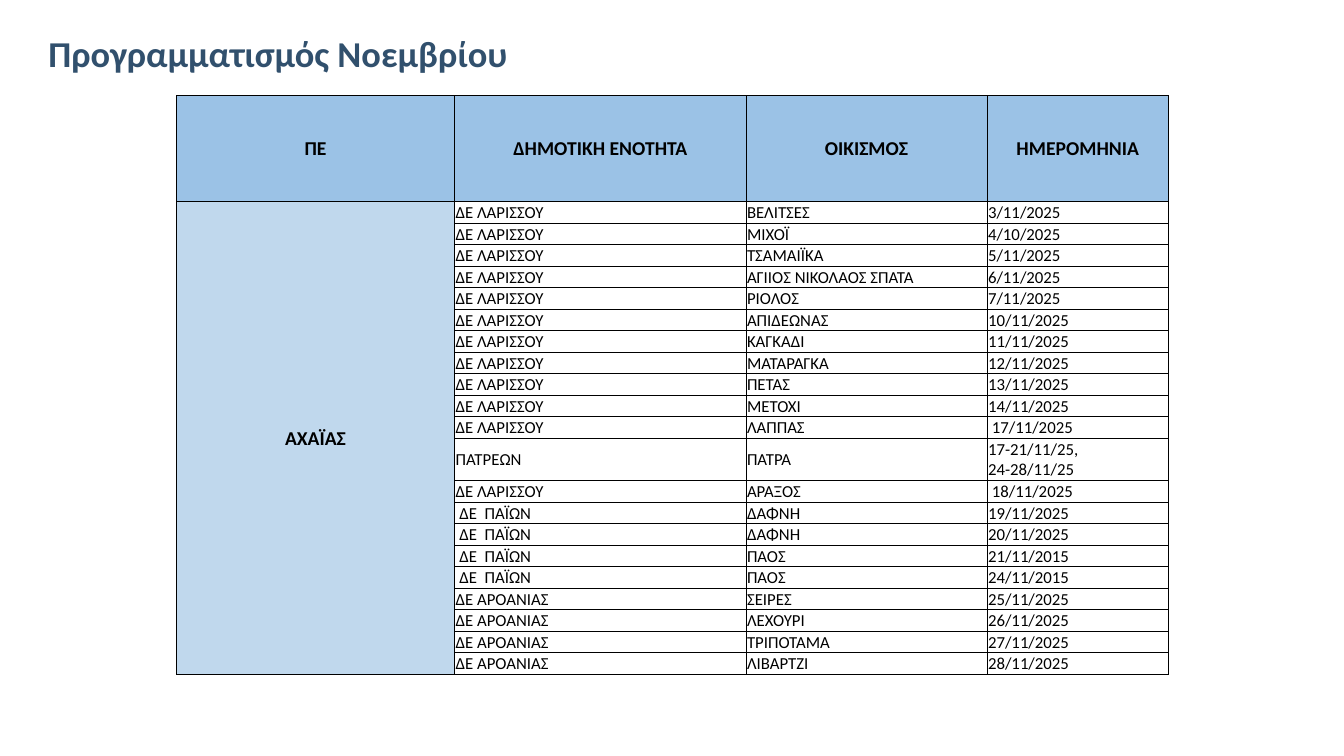
"""Build the November schedule slide: a title above a table of visits."""
import pptx
import pptx.util
import pptx.dml.color
import pptx.enum.text
import pptx.oxml.ns
import lxml.etree

Inch = pptx.util.Inches
qn = pptx.oxml.ns.qn
Align = pptx.enum.text.PP_ALIGN
Anchor = pptx.enum.text.MSO_ANCHOR


def paint(color, shade):
    color.rgb = pptx.dml.color.RGBColor.from_string(shade)


def style(par, size, shade, bold, align):
    par.alignment = align
    for run in par.runs:
        run.font.name = "Calibri"
        run.font.size = pptx.util.Pt(size)
        run.font.bold = bold
        paint(run.font.color, shade)
    for gap in par._p.iter(qn("a:br")):
        lxml.etree.SubElement(gap, qn("a:rPr"), sz=str(size * 100))


heads = ["ΠΕ", "ΔΗΜΟΤΙΚΗ ΕΝΟΤΗΤΑ", "ΟΙΚΙΣΜΟΣ", "ΗΜΕΡΟΜΗΝΙΑ"]
region = "ΑΧΑΪΑΣ"
lariss, paion, aroan = "ΔΕ ΛΑΡΙΣΣΟΥ", " ΔΕ  ΠΑΪΩΝ", "ΔΕ ΑΡΟΑΝΙΑΣ"
visits = [
    (lariss, "ΒΕΛΙΤΣΕΣ", "3/11/2025"),
    (lariss, "ΜΙΧΟΪ", "4/10/2025"),
    (lariss, "ΤΣΑΜΑΙΪΚΑ", "5/11/2025"),
    (lariss, "ΑΓΙΙΟΣ ΝΙΚΟΛΑΟΣ ΣΠΑΤΑ", "6/11/2025"),
    (lariss, "ΡΙΟΛΟΣ", "7/11/2025"),
    (lariss, "ΑΠΙΔΕΩΝΑΣ", "10/11/2025"),
    (lariss, "ΚΑΓΚΑΔΙ", "11/11/2025"),
    (lariss, "ΜΑΤΑΡΑΓΚΑ", "12/11/2025"),
    (lariss, "ΠΕΤΑΣ", "13/11/2025"),
    (lariss, "ΜΕΤΟΧΙ", "14/11/2025"),
    (lariss, "ΛΑΠΠΑΣ", " 17/11/2025"),
    ("ΠΑΤΡΕΩΝ", "ΠΑΤΡΑ", "17-21/11/25,\n24-28/11/25"),
    (lariss, "ΑΡΑΞΟΣ", " 18/11/2025"),
    (paion, "ΔΑΦΝΗ", "19/11/2025"),
    (paion, "ΔΑΦΝΗ", "20/11/2025"),
    (paion, "ΠΑΟΣ", "21/11/2015"),
    (paion, "ΠΑΟΣ", "24/11/2015"),
    (aroan, "ΣΕΙΡΕΣ", "25/11/2025"),
    (aroan, "ΛΕΧΟΥΡΙ", "26/11/2025"),
    (aroan, "ΤΡΙΠΟΤΑΜΑ", "27/11/2025"),
    (aroan, "ΛΙΒΑΡΤΖΙ", "28/11/2025"),
]
widths = [2.76, 2.89, 2.39, 1.8]
line = 0.21
tall = 5 * line
heights = [tall] + [line * (1 + day.count("\n")) for _, _, day in visits]

deck = pptx.Presentation()
deck.slide_width, deck.slide_height = Inch(13.33), Inch(7.5)
slide = deck.slides.add_slide(deck.slide_layouts[5])

title = slide.shapes.title
title.left, title.top = Inch(0.36), Inch(0.25)
title.width, title.height = Inch(12.4), Inch(0.55)
frame = title.text_frame
frame.text = "Προγραμματισμός Νοεμβρίου"
frame.auto_size = pptx.enum.text.MSO_AUTO_SIZE.NONE
frame.vertical_anchor = Anchor.BOTTOM
frame.margin_left = Inch(0.12)
frame.paragraphs[0].line_spacing = 0.9
style(frame.paragraphs[0], 26, "31506D", True, Align.LEFT)

table = slide.shapes.add_table(
    len(heights), len(widths), Inch(1.75), Inch(0.95),
    Inch(sum(widths)), Inch(sum(heights))).table
table.first_row = table.horz_banding = False
for col, width in zip(table.columns, widths):
    col.width = Inch(width)
for row, height in zip(table.rows, heights):
    row.height = Inch(height)
table.cell(1, 0).merge(table.cell(len(visits), 0))

grid = [heads] + [(region if n == 0 else "", *visit) for n, visit in enumerate(visits)]
for r, words in enumerate(grid):
    for c, word in enumerate(words):
        cell = table.cell(r, c)
        cell.margin_left = cell.margin_right = cell.margin_top = Inch(0.01)
        cell.margin_bottom = 0
        cell.vertical_anchor = Anchor.MIDDLE
        for side in "LRTB":
            edge = lxml.etree.SubElement(cell._tc.tcPr, qn("a:ln" + side), w="6350")
            fill = lxml.etree.SubElement(edge, qn("a:solidFill"))
            lxml.etree.SubElement(fill, qn("a:srgbClr"), val="000000")
        cell.fill.solid()
        paint(cell.fill.fore_color, "9BC2E6" if r == 0 else "C0D8ED" if c == 0 else "FFFFFF")
        if word:
            par = cell.text_frame.paragraphs[0]
            par.text = word
            main = r == 0 or c == 0
            style(par, 14 if main else 12, "000000", main,
                  Align.CENTER if main else Align.LEFT)

deck.save("out.pptx")
